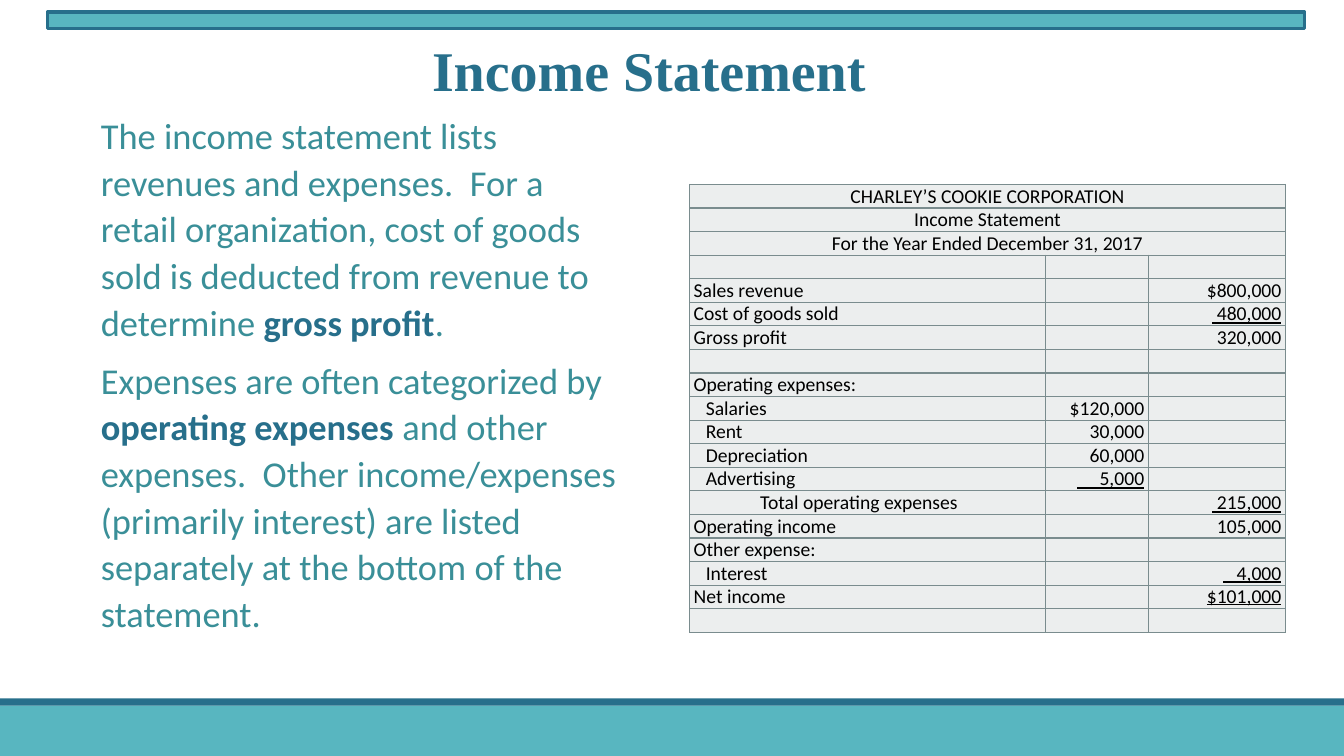
from lxml.etree import SubElement
from pptx import Presentation
from pptx.dml.color import RGBColor
from pptx.enum.shapes import MSO_SHAPE
from pptx.enum.text import MSO_ANCHOR, MSO_AUTO_SIZE, MSO_UNDERLINE, PP_ALIGN
from pptx.oxml.ns import qn
from pptx.util import Inches, Pt

TEAL, BLUE, BODY_TEAL = "58B6C0", "276F8B", "3A8F98"
CELL_FILL, BORDER, BLACK = "ECEEEE", "7A8C8E", "000000"
SINGLE, DOUBLE = MSO_UNDERLINE.SINGLE_LINE, MSO_UNDERLINE.DOUBLE_LINE

BODY = [
    [("The income statement lists revenues and expenses.  For a retail organization, "
      "cost of goods sold is deducted from revenue to determine ", False),
     ("gross profit", True), (".", False)],
    [("Expenses are often categorized by ", False), ("operating expenses ", True),
     ("and other expenses.  Other income/expenses (primarily interest) are listed "
      "separately at the bottom of the statement.", False)],
]

HEADINGS = ["CHARLEY’S COOKIE CORPORATION", "Income Statement",
            "For the Year Ended December 31, 2017"]
# Label, indent in inches, inner amount, outer amount, underline of the amount
ENTRIES = [
    ("", 0, "", "", None),
    ("Sales revenue", 0, "", "$800,000", None),
    ("Cost of goods sold", 0, "", " 480,000", SINGLE),
    ("Gross profit", 0, "", "320,000", None),
    ("", 0, "", "", None),
    ("Operating expenses:", 0, "", "", None),
    ("Salaries", 0.12, "$120,000", "", None),
    ("Rent", 0.12, "30,000", "", None),
    ("Depreciation", 0.12, "60,000", "", None),
    ("Advertising", 0.12, "     5,000", "", SINGLE),
    ("Total operating expenses", 0.66, "", " 215,000", SINGLE),
    ("Operating income", 0, "", "105,000", None),
    ("Other expense:", 0, "", "", None),
    ("Interest", 0.12, "", "   4,000", SINGLE),
    ("Net income", 0, "", "$101,000", DOUBLE),
    ("", 0, "", "", None),
]
COLUMN_WIDTHS = [3.53, 1.02, 1.36]
ROW_HEIGHT = 0.23


def color(hex_value):
    return RGBColor.from_string(hex_value)


def place(shape, left, top, width, height):
    shape.left, shape.top = Inches(left), Inches(top)
    shape.width, shape.height = Inches(width), Inches(height)


def add_run(paragraph, text, size, hex_value, font="Calibri", bold=False, underline=None):
    run = paragraph.add_run()
    run.text = text
    run.font.name = font
    run.font.size = Pt(size)
    run.font.bold = bold
    run.font.underline = underline
    run.font.color.rgb = color(hex_value)


def add_bar(slide, left, top, width, height, fill, line=None):
    bar = slide.shapes.add_shape(MSO_SHAPE.RECTANGLE, Inches(left), Inches(top),
                                 Inches(width), Inches(height))
    bar.shadow.inherit = False
    bar.fill.solid()
    bar.fill.fore_color.rgb = color(fill)
    if line:
        bar.line.color.rgb = color(line)
        bar.line.width = Pt(2.25)
    else:
        bar.line.fill.background()


def fill_title(title):
    place(title, 4.16, 0.3, 4.55, 0.77)
    frame = title.text_frame
    frame.word_wrap = False
    frame.auto_size = MSO_AUTO_SIZE.SHAPE_TO_FIT_TEXT
    frame.vertical_anchor = MSO_ANCHOR.TOP
    paragraph = frame.paragraphs[0]
    paragraph.alignment = PP_ALIGN.CENTER
    paragraph.space_before = Pt(12)
    add_run(paragraph, "Income Statement", 40, BLUE, "Times New Roman", True)


def fill_body(body):
    place(body, 0.9, 1.04, 5.39, 5.36)
    frame = body.text_frame
    frame.word_wrap = True
    frame.auto_size = MSO_AUTO_SIZE.SHAPE_TO_FIT_TEXT
    for index, runs in enumerate(BODY):
        paragraph = frame.add_paragraph() if index else frame.paragraphs[0]
        paragraph.line_spacing = 1.07
        paragraph.space_before = Pt(0)
        paragraph.space_after = Pt(8)
        properties = paragraph._p.get_or_add_pPr()
        properties.set("marL", "0")
        properties.set("indent", "0")
        SubElement(properties, qn("a:buNone"))
        for text, key_term in runs:
            add_run(paragraph, text, 26, BLUE if key_term else BODY_TEAL, bold=key_term)


def format_cell(cell):
    cell.margin_left = cell.margin_right = Inches(0.04)
    cell.margin_top = cell.margin_bottom = 0
    properties = cell._tc.get_or_add_tcPr()
    for side in ("lnL", "lnR", "lnT", "lnB"):
        line = SubElement(properties, qn(f"a:{side}"), w=str(Pt(1)))
        SubElement(SubElement(line, qn("a:solidFill")), qn("a:srgbClr"), val=BORDER)
    cell.fill.solid()
    cell.fill.fore_color.rgb = color(CELL_FILL)


def write_cell(cell, text, alignment, indent=0, underline=None):
    paragraph = cell.text_frame.paragraphs[0]
    paragraph.alignment = alignment
    if indent:
        paragraph._p.get_or_add_pPr().set("indent", str(Inches(indent)))
    if text:
        add_run(paragraph, text, 14, BLACK, underline=underline)
    else:
        SubElement(paragraph._p, qn("a:endParaRPr"), sz="1400")


def add_statement(slide):
    row_count = len(HEADINGS) + len(ENTRIES)
    table = slide.shapes.add_table(
        row_count, len(COLUMN_WIDTHS), Inches(6.84), Inches(1.83),
        Inches(sum(COLUMN_WIDTHS)), Inches(ROW_HEIGHT * row_count)).table
    table.first_row = table.horz_banding = False
    for column, width in zip(table.columns, COLUMN_WIDTHS):
        column.width = Inches(width)
    for row in table.rows:
        row.height = Inches(ROW_HEIGHT)
        for cell in row.cells:
            format_cell(cell)
    for index, heading in enumerate(HEADINGS):
        table.cell(index, 0).merge(table.cell(index, 2))
        write_cell(table.cell(index, 0), heading, PP_ALIGN.CENTER)
    for index, entry in enumerate(ENTRIES, len(HEADINGS)):
        label, indent, inner, outer, underline = entry
        write_cell(table.cell(index, 0), label, PP_ALIGN.LEFT, indent)
        for column, amount in enumerate((inner, outer), 1):
            write_cell(table.cell(index, column), amount, PP_ALIGN.RIGHT, underline=underline)


def main():
    presentation = Presentation()
    presentation.slide_width = Inches(13.33)
    presentation.slide_height = Inches(7.5)
    slide = presentation.slides.add_slide(presentation.slide_layouts[1])
    add_bar(slide, 0, 7, 13.33, 0.5, TEAL)
    add_bar(slide, 0, 6.93, 13.33, 0.07, BLUE)
    add_bar(slide, 0.47, 0.12, 12.47, 0.16, TEAL, BLUE)
    fill_title(slide.shapes.title)
    fill_body(slide.placeholders[1])
    add_statement(slide)
    presentation.save("out.pptx")


if __name__ == "__main__":
    main()
